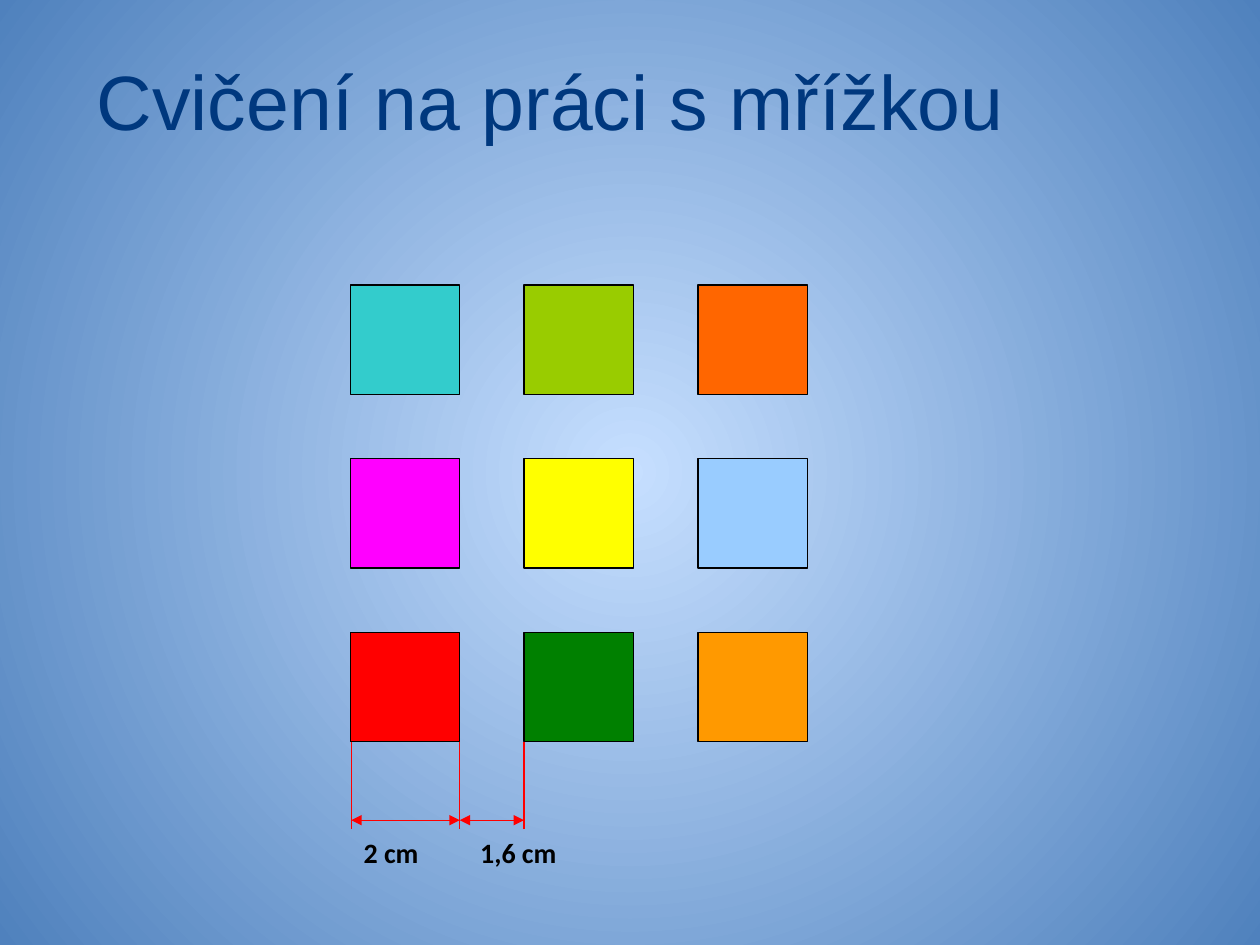
from lxml import etree
from pptx import Presentation
from pptx.dml.color import RGBColor
from pptx.enum import shapes, text
from pptx.oxml import parse_xml
from pptx.oxml.ns import nsdecls, qn
from pptx.util import Pt

NAVY = RGBColor(0x00, 0x38, 0x7E)
BLACK = RGBColor(0, 0, 0)
RED = RGBColor(0xFF, 0, 0)
GLOW = [RGBColor(0xC6, 0xDF, 0xFF), RGBColor(0x4F, 0x81, 0xBD)]

TITLE = "Cvičení na práci s mřížkou"
GRID = [
    ["33CCCC", "99CC00", "FF6600"],
    ["FF00FF", "FFFF00", "99CCFF"],
    ["FF0000", "008000", "FF9900"],
]
LABELS = ["2 cm", "1,6 cm"]

LEFT, TOP = 200.2, 162.8
SIDE, STEP = 62.5, 99.3
FOOT = TOP + 2 * STEP + SIDE
ARROW, END = 468.7, 473.8
LABEL_W, LABEL_H = 66.6, 31


def paint(slide):
    """Give the slide a round gradient that spreads from its centre."""
    fill = slide.background.fill
    fill.gradient()
    for stop, color, place in zip(fill.gradient_stops, GLOW, (0, 1)):
        stop.color.rgb = color
        stop.position = place
    grad = next(slide.background._cSld.iter(qn("a:gradFill")))
    grad.replace(grad.find(qn("a:lin")), parse_xml(
        f'<a:path {nsdecls("a")} path="circle">'
        '<a:fillToRect l="50000" t="50000" r="50000" b="50000"/></a:path>'))


def write(slide, words, box, font, size, color, bold=False):
    frame = slide.shapes.add_textbox(*map(Pt, box)).text_frame
    frame.word_wrap = True
    para = frame.paragraphs[0]
    para.text = words
    para.font.name, para.font.size = font, Pt(size)
    para.font.color.rgb, para.font.bold = color, bold
    return frame


def square(slide, x, y, color):
    shape = slide.shapes.add_shape(
        shapes.MSO_SHAPE.RECTANGLE, Pt(x), Pt(y), Pt(SIDE), Pt(SIDE))
    shape.shadow.inherit = False
    shape.fill.solid()
    shape.fill.fore_color.rgb = RGBColor.from_string(color)
    shape.line.color.rgb = BLACK
    shape.line.width = Pt(0.75)


def rule(slide, x1, y1, x2, y2, heads=False):
    line = slide.shapes.add_connector(
        shapes.MSO_CONNECTOR.STRAIGHT, Pt(x1), Pt(y1), Pt(x2), Pt(y2))
    line.line.color.rgb = RED
    line.line.width = Pt(0.75)
    props = line._element.spPr
    if heads:
        for tag in ("a:headEnd", "a:tailEnd"):
            etree.SubElement(props.find(qn("a:ln")), qn(tag), type="triangle")
    etree.SubElement(props, qn("a:effectLst"))


def main():
    deck = Presentation()
    deck.slide_width, deck.slide_height = Pt(720), Pt(540)
    slide = deck.slides.add_slide(deck.slide_layouts[6])
    paint(slide)

    title = write(slide, TITLE, (48.2, 18, 642.2, 77.8), "Arial", 44, NAVY)
    title.vertical_anchor = text.MSO_ANCHOR.MIDDLE

    for row, colors in enumerate(GRID):
        for col, color in enumerate(colors):
            square(slide, LEFT + col * STEP, TOP + row * STEP, color)

    marks = [LEFT + 0.5, LEFT + SIDE, LEFT + STEP]
    for x in marks:
        rule(slide, x, END, x, FOOT)
    for i, (start, stop) in enumerate(zip(marks, marks[1:])):
        rule(slide, start, ARROW, stop, ARROW, heads=True)
        box = (marks[0] + i * LABEL_W, END, LABEL_W, LABEL_H)
        label = write(slide, LABELS[i], box, "Calibri", 16, BLACK, True)
        label.paragraphs[0].space_after = Pt(10)

    deck.save("out.pptx")


if __name__ == "__main__":
    main()
